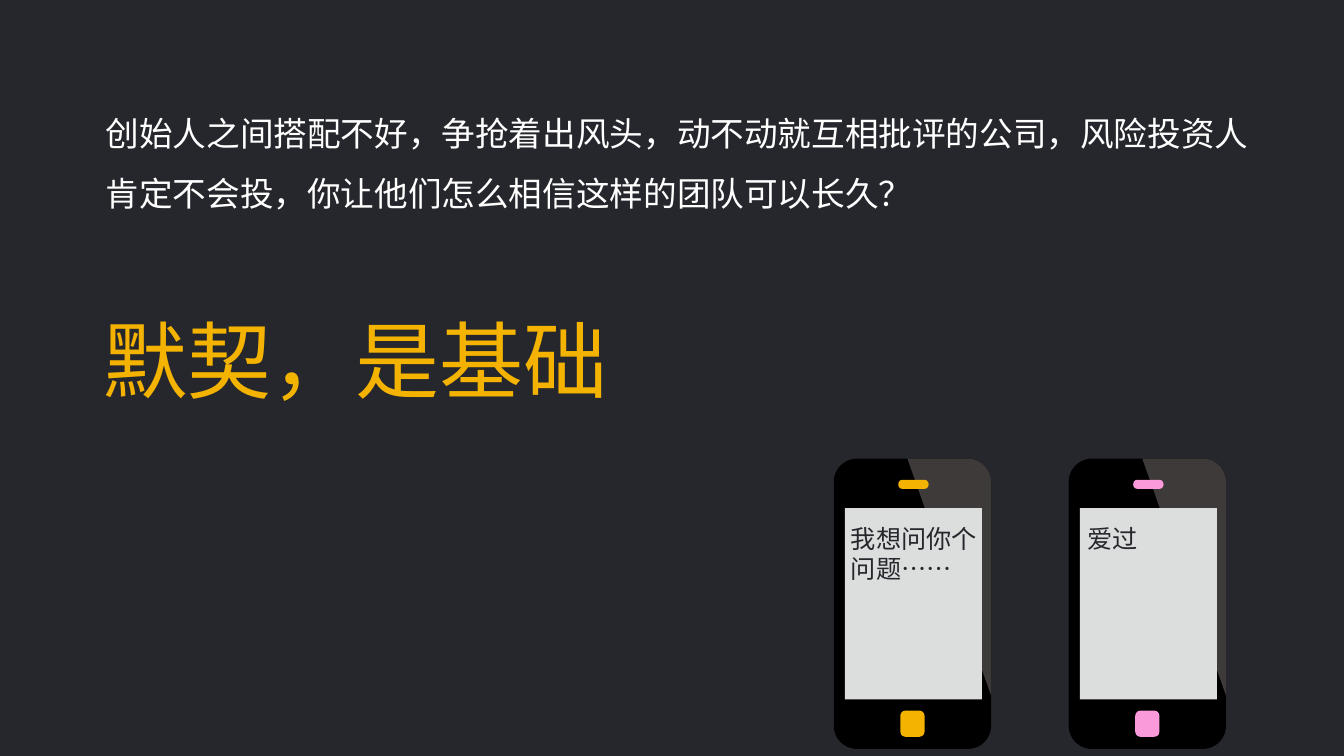
from dataclasses import dataclass
from math import cos, pi, sin

from lxml import etree
from pptx import Presentation
from pptx.dml.color import RGBColor
from pptx.enum.shapes import MSO_SHAPE
from pptx.enum.text import MSO_AUTO_SIZE
from pptx.oxml.ns import qn
from pptx.shapes.autoshape import Shape
from pptx.shapes.group import GroupShape
from pptx.slide import Slide
from pptx.util import Inches, Pt

RECT = MSO_SHAPE.RECTANGLE
ROUNDED = MSO_SHAPE.ROUNDED_RECTANGLE
FIT_SHAPE = MSO_AUTO_SIZE.SHAPE_TO_FIT_TEXT

FONT = "Noto Sans CJK SC"
COLORS = {
    "background": "26272C",
    "white": "FFFFFF",
    "yellow": "F3B300",
    "pink": "FA9ADA",
    "body": "000000",
    "glare": "3E3A39",
    "screen": "DCDDDD",
}
PHONE_TOP = 4.55
PHONE_WIDTH = 1.56
CORNER = 0.23
ARC_STEPS = 12


@dataclass
class TextBlock:
    left: float
    top: float
    width: float
    height: float
    lines: list[str]
    size: int
    color: str
    spacing: float = 1.0


@dataclass
class Phone:
    left: float
    accent: str


@dataclass
class PhonePart:
    """A box placed relative to the phone's top left corner."""
    left: float
    top: float
    width: float
    height: float
    color: str
    radius: float = 0


TEXTS = [
    TextBlock(0.95, 0.87, 11.53, 1.3,
              ["创始人之间搭配不好，争抢着出风头，动不动就互相批评的公司，风险投资人",
               "肯定不会投，你让他们怎么相信这样的团队可以长久？"],
              24, "white", 1.5),
    TextBlock(0.93, 3.01, 5.2, 1.1, ["默契，是基础"], 60, "yellow"),
]
PHONES = [Phone(8.27, "yellow"), Phone(10.6, "pink")]
MESSAGES = [
    TextBlock(8.34, 5.14, 1.45, 0.7, ["我想问你个", "问题……"], 18, "background"),
    TextBlock(10.69, 5.14, 0.7, 0.4, ["爱过"], 18, "background"),
]


def rgb(name: str) -> RGBColor:
    return RGBColor.from_string(COLORS[name])


def paint(sp: Shape, color: str) -> None:
    sp.shadow.inherit = False
    sp.fill.solid()
    sp.fill.fore_color.rgb = rgb(color)
    sp.line.fill.background()


def add_text(s: Slide, block: TextBlock) -> None:
    box = s.shapes.add_textbox(Inches(block.left), Inches(block.top),
                               Inches(block.width), Inches(block.height))
    tf = box.text_frame
    tf.word_wrap = False
    tf.auto_size = FIT_SHAPE
    tf.text = "\n".join(block.lines)
    for p in tf.paragraphs:
        p.line_spacing = block.spacing
        p.font.size = Pt(block.size)
        p.font.color.rgb = rgb(block.color)
        p.font.name = FONT
        # East Asian typeface
        props = p._p.pPr.find(qn("a:defRPr"))
        etree.SubElement(props, qn("a:ea"), typeface=FONT)


def add_part(group: GroupShape, phone: Phone, part: PhonePart) -> None:
    sp = group.shapes.add_shape(
        ROUNDED if part.radius else RECT,
        Inches(phone.left + part.left), Inches(PHONE_TOP + part.top),
        Inches(part.width), Inches(part.height))
    if part.radius:
        sp.adjustments[0] = part.radius / min(part.width, part.height)
    paint(sp, part.color)


def add_glare(group: GroupShape, phone: Phone) -> None:
    right = phone.left + PHONE_WIDTH
    angles = [pi / 2 * i / ARC_STEPS for i in range(ARC_STEPS + 1)]
    corner = [(Inches(right - CORNER * (1 - sin(a))),
               Inches(PHONE_TOP + CORNER * (1 - cos(a)))) for a in angles]
    builder = group.shapes.build_freeform(Inches(right - 0.83), Inches(PHONE_TOP))
    builder.add_line_segments(corner + [(Inches(right), Inches(PHONE_TOP + 2.35))])
    paint(builder.convert_to_shape(), "glare")


def add_phone(s: Slide, phone: Phone) -> None:
    group = s.shapes.add_group_shape()
    add_part(group, phone, PhonePart(0, 0, PHONE_WIDTH, 2.88, "body", CORNER))
    add_glare(group, phone)
    # Speaker, screen and home button
    for part in (PhonePart(0.64, 0.21, 0.3, 0.09, phone.accent, 0.04),
                 PhonePart(0.11, 0.49, 1.36, 1.9, "screen"),
                 PhonePart(0.66, 2.5, 0.24, 0.26, phone.accent, 0.05)):
        add_part(group, phone, part)


def main() -> None:
    prs = Presentation()
    prs.slide_width, prs.slide_height = Inches(13.33), Inches(7.5)
    s = prs.slides.add_slide(prs.slide_layouts[6])
    s.background.fill.solid()
    s.background.fill.fore_color.rgb = rgb("background")

    # Statement and headline
    for block in TEXTS:
        add_text(s, block)

    # Phones with their messages on top
    for phone in PHONES:
        add_phone(s, phone)
    for message in MESSAGES:
        add_text(s, message)

    prs.save("out.pptx")


if __name__ == "__main__":
    main()
